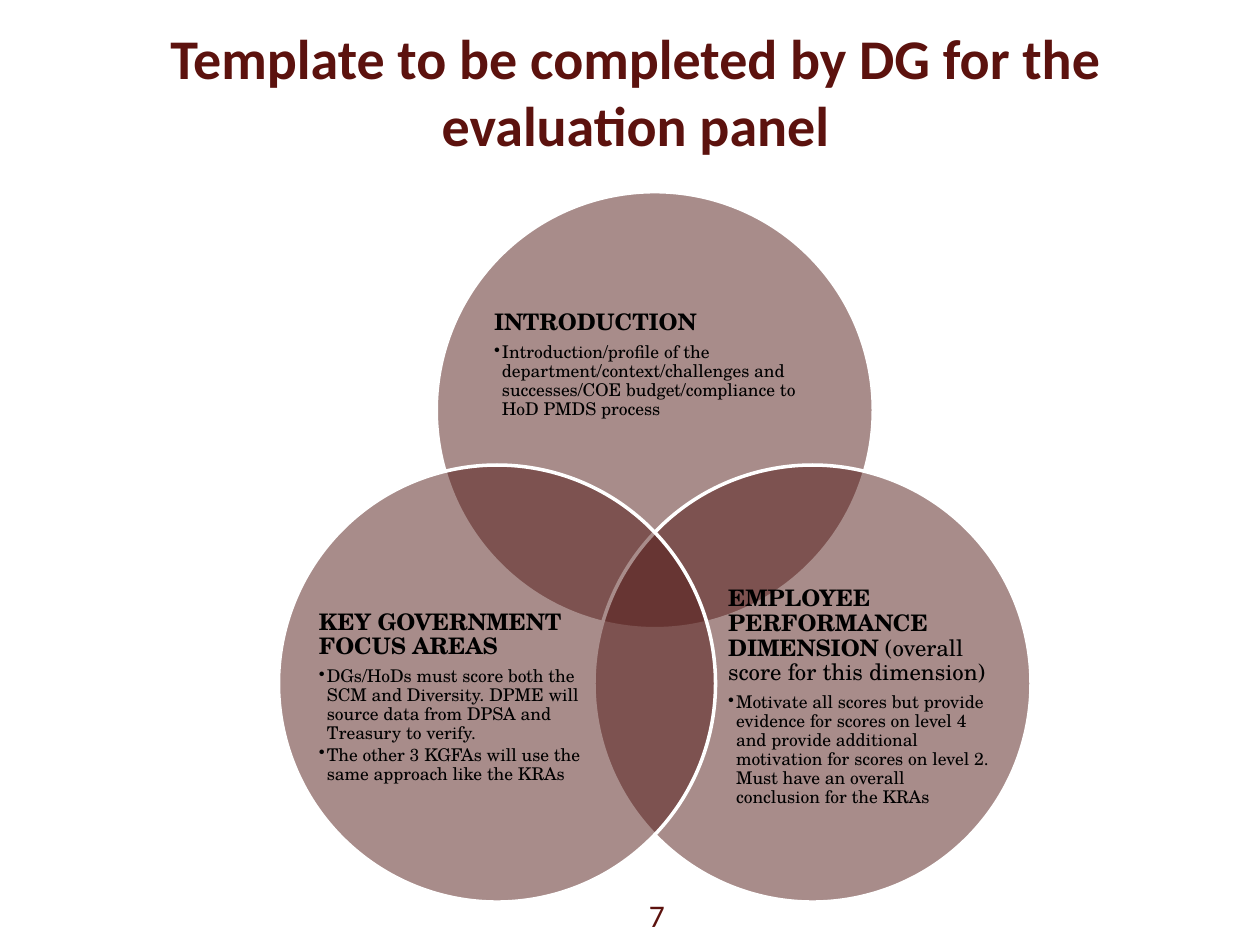
"""Build the Venn slide on the template a DG completes for the evaluation panel."""
from dataclasses import dataclass

from lxml import etree
from pptx import Presentation
from pptx.dml.color import RGBColor
from pptx.enum.shapes import MSO_SHAPE
from pptx.enum.text import MSO_ANCHOR, MSO_AUTO_SIZE, PP_ALIGN
from pptx.oxml.ns import qn
from pptx.util import Cm, Pt

OVAL = MSO_SHAPE.OVAL
MIDDLE = MSO_ANCHOR.MIDDLE
NO_FIT = MSO_AUTO_SIZE.NONE
LEFT, CENTER = PP_ALIGN.LEFT, PP_ALIGN.CENTER

COLORS = {"title": "5C120E", "circle": "531A17", "outline": "FFFFFF", "text": "000000"}
TITLE = {"name": "Calibri", "size": Pt(32), "bold": True}
NUMBER = {"name": "Calibri", "size": Pt(18), "bold": False}
HEADING = {"name": "TeX Gyre Schola", "size": Pt(13), "bold": True}
HEADING_NOTE = {**HEADING, "bold": False}
ITEM = {**HEADING_NOTE, "size": Pt(10)}

DIAMETER = 8.81
CENTER_X, TOP_Y = 13.2, 8.27
SPREAD_X, SPREAD_Y = 3.18, 5.51
HANG = Cm(0.16)


@dataclass
class Box:
    """A rectangle in centimetres."""
    left: float
    top: float
    width: float
    height: float

    def lengths(self) -> tuple:
        """Return the sides as slide lengths."""
        return Cm(self.left), Cm(self.top), Cm(self.width), Cm(self.height)


@dataclass
class Topic:
    """A circle of the diagram with its heading and list."""
    x: float
    y: float
    box: Box
    heading: str
    items: list[str]
    note: str = ""


TOPICS = [
    Topic(CENTER_X, TOP_Y, Box(9.96, 5.38, 6.48, 3.96), "INTRODUCTION",
          ["Introduction/profile of the department/context/challenges and "
           "successes/COE budget/compliance to HoD PMDS process"]),
    Topic(CENTER_X + SPREAD_X, TOP_Y + SPREAD_Y, Box(14.68, 11.63, 5.28, 4.85),
          "EMPLOYEE PERFORMANCE DIMENSION ",
          ["Motivate all scores but provide evidence for scores on level 4 and provide "
           "additional motivation for scores on level 2. Must have an overall "
           "conclusion for the KRAs"],
          "(overall score for this dimension)"),
    Topic(CENTER_X - SPREAD_X, TOP_Y + SPREAD_Y, Box(6.43, 11.63, 5.28, 4.85),
          "KEY GOVERNMENT FOCUS AREAS",
          ["DGs/HoDs must score both the SCM and Diversity. DPME will source data "
           "from DPSA and Treasury to verify.",
           "The other 3 KGFAs will use the same approach like the KRAs"]),
]


def add_run(p, text: str, style: dict, color: str) -> None:
    """Append a formatted run to a paragraph."""
    r = p.add_run()
    r.text = text
    for name, value in style.items():
        setattr(r.font, name, value)
    r.font.color.rgb = RGBColor.from_string(COLORS[color])


def set_frame(tf, margin: float) -> None:
    """Wrap and centre a text frame vertically, with equal margins."""
    frame = {"word_wrap": True, "auto_size": NO_FIT, "vertical_anchor": MIDDLE}
    for side in ("left", "right", "top", "bottom"):
        frame[f"margin_{side}"] = Cm(margin)
    for name, value in frame.items():
        setattr(tf, name, value)


def set_paragraph(p, space_after: float) -> None:
    """Apply the paragraph format shared by headings and items."""
    values = {"alignment": LEFT, "line_spacing": 0.9, "space_after": Pt(space_after)}
    for name, value in values.items():
        setattr(p, name, value)


def add_circle(s, topic: Topic) -> None:
    """Draw the half-transparent circle of a topic."""
    radius = DIAMETER / 2
    box = Box(topic.x - radius, topic.y - radius, DIAMETER, DIAMETER)
    sp = s.shapes.add_shape(OVAL, *box.lengths())
    sp.shadow.inherit = False
    sp.fill.solid()
    sp.fill.fore_color.rgb = RGBColor.from_string(COLORS["circle"])
    color = sp.fill._xPr.find(f".//{qn('a:srgbClr')}")
    etree.SubElement(color, qn("a:alpha"), val="50000")
    sp.line.color.rgb = RGBColor.from_string(COLORS["outline"])
    sp.line.width = Pt(2)


def add_topic_text(s, topic: Topic) -> None:
    """Write the heading and bulleted items of a topic."""
    tf = s.shapes.add_textbox(*topic.box.lengths()).text_frame
    set_frame(tf, 0)
    p = tf.paragraphs[0]
    set_paragraph(p, 4.55)
    add_run(p, topic.heading, HEADING, "text")
    if topic.note:
        add_run(p, topic.note, HEADING_NOTE, "text")
    for item in topic.items:
        p = tf.add_paragraph()
        p.level = 1
        set_paragraph(p, 1.5)
        pPr = p._p.get_or_add_pPr()
        pPr.set("marL", str(HANG))
        pPr.set("indent", str(-HANG))
        etree.SubElement(pPr, qn("a:buChar"), char="•")
        add_run(p, item, ITEM, "text")


def add_centred_text(sp, text: str, style: dict) -> None:
    """Write one centred line of title-coloured text in a shape."""
    set_frame(sp.text_frame, 0.2)
    p = sp.text_frame.paragraphs[0]
    p.alignment = CENTER
    add_run(p, text, style, "title")


def main() -> None:
    """Create and save the slide."""
    prs = Presentation()
    prs.slide_width, prs.slide_height = Cm(25.4), Cm(19.05)
    s = prs.slides.add_slide(prs.slide_layouts[5])
    title = s.shapes.title
    title.left, title.top, title.width, title.height = Box(0.71, 0.51, 24.21, 2.62).lengths()
    add_centred_text(title, "Template to be completed by DG for the evaluation panel", TITLE)
    number = s.shapes.add_textbox(*Box(12.29, 17.88, 1.91, 1.12).lengths())
    add_centred_text(number, "7", NUMBER)
    for topic in TOPICS:
        add_circle(s, topic)
        add_topic_text(s, topic)
    prs.save("out.pptx")


if __name__ == "__main__":
    main()
